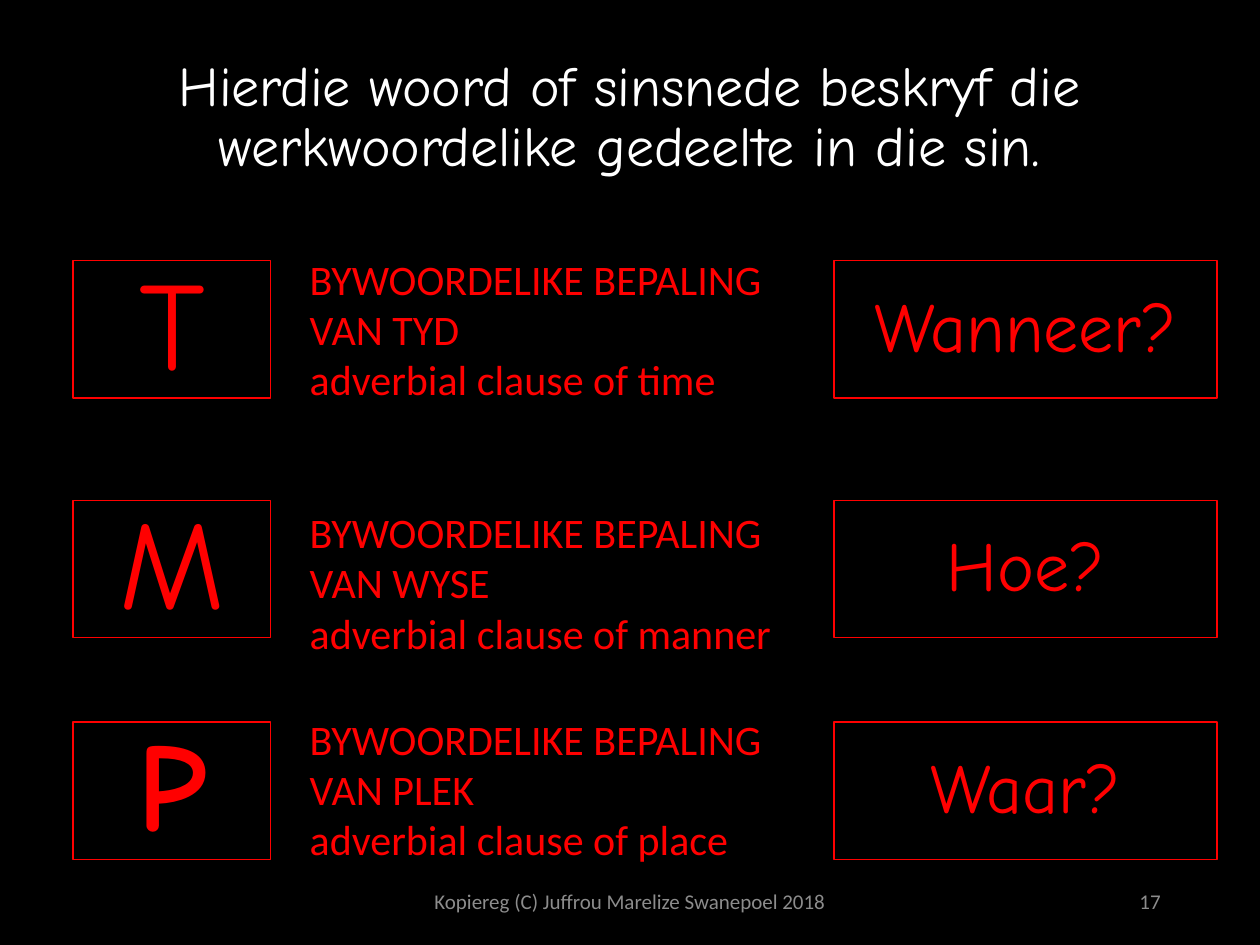
from pptx import Presentation
from pptx.dml.color import RGBColor
from pptx.enum.shapes import MSO_SHAPE
from pptx.enum.text import MSO_ANCHOR, MSO_AUTO_SIZE, PP_ALIGN
from pptx.util import Inches, Pt

COLORS = {"black": "000000", "white": "FFFFFF", "red": "FF0000", "grey": "8C8C8C"}
HEADING_FONT = "Comic Neue"
BODY_FONT = "Calibri"
BOX_HEIGHT = 1.09
ROWS = [
    (2.07, 1.96, "T", False, "BYWOORDELIKE BEPALING VAN TYD", "adverbial clause of time", "Wanneer?"),
    (3.97, 3.97, "M", False, "BYWOORDELIKE BEPALING VAN WYSE", "adverbial clause of manner", "Hoe?"),
    (5.73, 5.61, "P", True, "BYWOORDELIKE BEPALING VAN PLEK", "adverbial clause of place", "Waar?"),
]


def rgb(name):
    return RGBColor.from_string(COLORS[name])


def style_text(frame, size, font, color, align, bold=False, spacing=None):
    for paragraph in frame.paragraphs:
        paragraph.alignment = align
        if spacing:
            paragraph.line_spacing = spacing
        for run in paragraph.runs:
            run.font.size = Pt(size)
            run.font.name = font
            run.font.bold = bold
            run.font.color.rgb = rgb(color)


def set_insets(frame, inset):
    frame.margin_left = frame.margin_right = Inches(inset)
    frame.margin_top = frame.margin_bottom = Inches(inset)


def place_title(slide, left, top, width, height):
    title = slide.shapes.title
    title.left, title.top = Inches(left), Inches(top)
    title.width, title.height = Inches(width), Inches(height)
    frame = title.text_frame
    frame.text = "Hierdie woord of sinsnede beskryf die werkwoordelike gedeelte in die sin."
    frame.auto_size = MSO_AUTO_SIZE.NONE
    frame.vertical_anchor = MSO_ANCHOR.TOP
    set_insets(frame, 0.1)
    style_text(frame, 32, HEADING_FONT, "white", PP_ALIGN.CENTER, spacing=0.9)


def add_framed_word(slide, left, top, width, height, word, size, bold=False):
    box = slide.shapes.add_shape(
        MSO_SHAPE.RECTANGLE, Inches(left), Inches(top), Inches(width), Inches(height))
    box.shadow.inherit = False
    box.fill.solid()
    box.fill.fore_color.rgb = rgb("black")
    box.line.color.rgb = rgb("red")
    box.line.width = Pt(0.75)
    frame = box.text_frame
    frame.text = word
    frame.vertical_anchor = MSO_ANCHOR.MIDDLE
    set_insets(frame, 0.1)
    style_text(frame, size, HEADING_FONT, "red", PP_ALIGN.CENTER, bold, 0.9)


def add_text(slide, left, top, width, height, text, size, color, align, anchor):
    box = slide.shapes.add_textbox(Inches(left), Inches(top), Inches(width), Inches(height))
    frame = box.text_frame
    frame.word_wrap = True
    frame.vertical_anchor = anchor
    frame.text = text
    style_text(frame, size, BODY_FONT, color, align)
    return frame


def add_clause_row(slide, left, top, clause_top, letter, bold, afrikaans, english, question):
    add_framed_word(slide, left, top, 1.57, BOX_HEIGHT, letter, 72, bold)
    clause = add_text(slide, left + 1.78, clause_top, 3.96, 1.31, f"{afrikaans}\n{english}",
                      24, "red", PP_ALIGN.LEFT, MSO_ANCHOR.TOP)
    clause.auto_size = MSO_AUTO_SIZE.SHAPE_TO_FIT_TEXT
    add_framed_word(slide, left + 6.04, top, 3.04, BOX_HEIGHT, question, 40)


def add_footer(slide, top, height):
    add_text(slide, 3.31, top, 3.38, height, "Kopiereg (C) Juffrou Marelize Swanepoel 2018",
             12, "grey", PP_ALIGN.CENTER, MSO_ANCHOR.MIDDLE)
    add_text(slide, 7.06, top, 2.25, height, "17",
             12, "grey", PP_ALIGN.RIGHT, MSO_ANCHOR.MIDDLE)


def main():
    deck = Presentation()
    deck.slide_width, deck.slide_height = Inches(10), Inches(7.5)
    slide = deck.slides.add_slide(deck.slide_layouts[5])
    slide.background.fill.solid()
    slide.background.fill.fore_color.rgb = rgb("black")
    place_title(slide, 0.34, 0.36, 9.32, 1.09)
    for top, clause_top, *words in ROWS:
        add_clause_row(slide, 0.58, top, clause_top, *words)
    add_footer(slide, 6.95, 0.4)
    deck.save("out.pptx")


if __name__ == "__main__":
    main()
